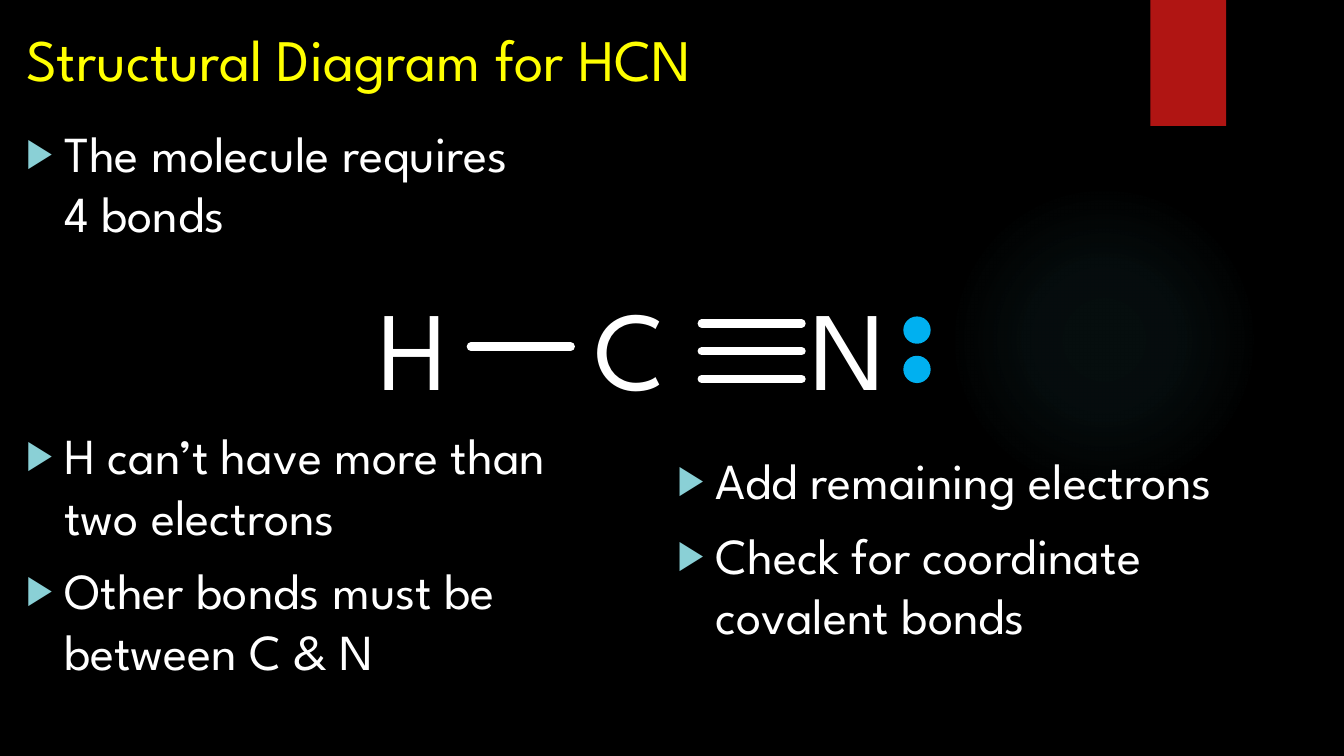
from collections import namedtuple

from lxml import etree
from pptx import Presentation
from pptx.dml.color import RGBColor
from pptx.enum.shapes import MSO_CONNECTOR, MSO_SHAPE
from pptx.enum.text import MSO_ANCHOR
from pptx.oxml import parse_xml
from pptx.oxml.ns import nsdecls, qn
from pptx.util import Inches, Pt

STRAIGHT = MSO_CONNECTOR.STRAIGHT
OVAL = MSO_SHAPE.OVAL
RECTANGLE = MSO_SHAPE.RECTANGLE
TOP = MSO_ANCHOR.TOP

BLACK = RGBColor(0x00, 0x00, 0x00)
WHITE = RGBColor(0xFF, 0xFF, 0xFF)
YELLOW = RGBColor(0xFF, 0xFF, 0x00)
RED = RGBColor(0xB0, 0x15, 0x13)
BLUE = RGBColor(0x00, 0xB0, 0xF0)
TEAL = RGBColor(0x50, 0xB9, 0xC1)
PALE_TEAL = RGBColor(0x8A, 0xD0, 0xD6)

FONT = "League Spartan"
TITLE_FORMAT = {"name": FONT, "size": Pt(42)}
BULLET_FORMAT = {"name": FONT, "size": Pt(36)}
ATOM_FORMAT = {"name": FONT, "size": Pt(80)}

Box = namedtuple("Box", "left top width height")


def part(box, left, top, width, height):
    """Return the part of a box given in percent of its size."""
    return Box(
        int(box.left + box.width * left / 100),
        int(box.top + box.height * top / 100),
        int(box.width * width / 100),
        int(box.height * height / 100),
    )


def add_text(slide, box, lines, font_format, color, bulleted=False):
    frame = slide.shapes.add_textbox(*box).text_frame
    frame.word_wrap = True
    frame.vertical_anchor = TOP
    for index, line in enumerate(lines):
        paragraph = frame.paragraphs[0] if index == 0 else frame.add_paragraph()
        if bulleted:
            add_bullet(paragraph)
            if index:
                paragraph.space_before = Pt(10)
        paragraph.text = line
        for name, value in font_format.items():
            setattr(paragraph.runs[0].font, name, value)
        paragraph.runs[0].font.color.rgb = color


def add_bullet(paragraph):
    properties = paragraph._p.get_or_add_pPr()
    indent = Inches(0.38)
    properties.set("marL", str(indent))
    properties.set("indent", str(-indent))
    color = etree.SubElement(properties, qn("a:buClr"))
    etree.SubElement(color, qn("a:srgbClr"), val=str(PALE_TEAL))
    etree.SubElement(properties, qn("a:buSzPct"), val="80000")
    etree.SubElement(properties, qn("a:buFont"), typeface="Arial")
    etree.SubElement(properties, qn("a:buChar"), char="▶")


def add_solid(slide, kind, box, color):
    solid = slide.shapes.add_shape(kind, *box)
    solid.shadow.inherit = False
    solid.fill.solid()
    solid.fill.fore_color.rgb = color
    solid.line.fill.background()
    return solid


def add_glow(slide, box):
    glow = add_solid(slide, OVAL, box, TEAL)
    stops = "".join(
        f'<a:gs pos="{position * 1000}"><a:srgbClr val="{TEAL}">'
        f'<a:alpha val="{alpha * 1000}"/></a:srgbClr></a:gs>'
        for position, alpha in ((0, 7), (36, 6), (69, 0))
    )
    gradient = parse_xml(
        f'<a:gradFill {nsdecls("a")}><a:gsLst>{stops}</a:gsLst>'
        '<a:path path="circle"><a:fillToRect l="50000" t="50000" '
        'r="50000" b="50000"/></a:path></a:gradFill>'
    )
    properties = glow._element.spPr
    properties.replace(properties.find(qn("a:solidFill")), gradient)


def add_ribbon(slide, box):
    ribbon = add_solid(slide, RECTANGLE, box, RED)
    effects = ribbon._element.spPr.find(qn("a:effectLst"))
    effects.append(parse_xml(
        f'<a:outerShdw {nsdecls("a")} blurRad="{Pt(3)}" dist="{Pt(2)}" '
        f'dir="5400000" rotWithShape="0"><a:srgbClr val="{BLACK}">'
        '<a:alpha val="45000"/></a:srgbClr></a:outerShdw>'
    ))


def add_bond(slide, box):
    bond = slide.shapes.add_connector(
        STRAIGHT, box.left, box.top, box.left + box.width, box.top
    )
    bond.line.color.rgb = WHITE
    bond.line.width = Pt(6)
    bond.line._get_or_add_ln().set("cap", "rnd")
    etree.SubElement(bond._element.spPr, qn("a:effectLst"))


def add_molecule(slide, box):
    for column, atom in enumerate("HCN"):
        add_text(slide, part(box, column * 38.5, 0, 20.68, 100),
                 [atom], ATOM_FORMAT, WHITE)
    add_bond(slide, part(box, 18.17, 50.34, 17.8, 0))
    for row in range(3):
        add_bond(slide, part(box, 59.35, 34.48 + row * 18.97, 17.8, 0))
    for row in range(2):
        electron = add_solid(
            slide, OVAL, part(box, 95.5, 30.34 + row * 26.9, 4.5, 17.24), BLUE
        )
        electron.line.color.rgb = BLUE
        electron.line.width = Pt(1.5)


def add_structure_slide(deck, page):
    slide = deck.slides.add_slide(deck.slide_layouts[6])
    slide.background.fill.solid()
    slide.background.fill.fore_color.rgb = BLACK
    add_glow(slide, part(page, 70.59, 24.4, 23.11, 41.07))
    add_ribbon(slide, part(page, 85.6, 0, 5.63, 16.67))
    add_text(slide, part(page, 1.2, 2.4, 59.41, 11.33),
             ["Structural Diagram for HCN"], TITLE_FORMAT, YELLOW)
    add_molecule(slide, part(page, 27.46, 36.13, 41.71, 19.33))
    notes_by_box = (
        (part(page, 1.2, 15.47, 39.01, 19.07),
         ["The molecule requires 4 bonds"]),
        (part(page, 1.2, 55.47, 45.24, 33.07),
         ["H can’t have more than two electrons",
          "Other bonds must be between C & N"]),
        (part(page, 49.66, 58.8, 47.86, 35.6),
         ["Add remaining electrons",
          "Check for coordinate covalent bonds"]),
    )
    for box, lines in notes_by_box:
        add_text(slide, box, lines, BULLET_FORMAT, WHITE, bulleted=True)


def main():
    deck = Presentation()
    deck.slide_width = Inches(13.33)
    deck.slide_height = Inches(7.5)
    add_structure_slide(deck, Box(0, 0, deck.slide_width, deck.slide_height))
    deck.save("out.pptx")


if __name__ == "__main__":
    main()
